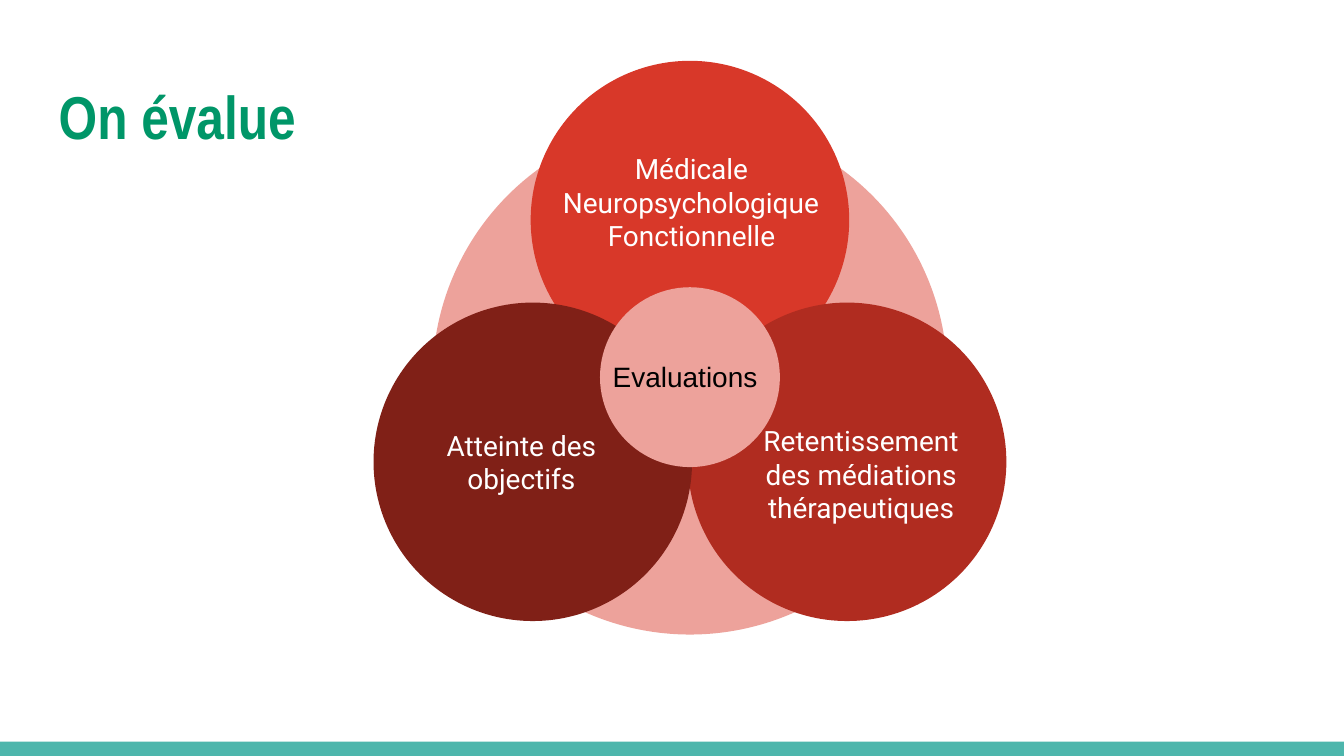
"""Build the "On évalue" slide: three evaluation circles around a shared core."""
from dataclasses import dataclass

from pptx import Presentation
from pptx import util as u
from pptx.dml.color import RGBColor
from pptx.enum import shapes, text

COLORS = {
    "title": "009668", "bar": "4DB6AC", "pale": "EDA29B", "red": "D83829",
    "brick": "B02C20", "maroon": "802017", "white": "FFFFFF", "black": "000000",
}
CENTER_X, CENTER_Y = 13.04, 7.13
RING, PETAL, CORE = 9.73, 6.02, 3.4
SPREAD, DROP = 2.97, 1.6
INSET = u.Cm(0.25)
LEFT, CENTERED = text.PP_ALIGN.LEFT, text.PP_ALIGN.CENTER
TOP, MIDDLE = text.MSO_ANCHOR.TOP, text.MSO_ANCHOR.MIDDLE


@dataclass
class Circle:
    dx: float
    dy: float
    diameter: float
    color: str


@dataclass
class Label:
    box: tuple[float, float, float, float]
    lines: list[str]
    aligns: list
    font: str = "Roboto"
    color: str = "white"
    size: float = 15
    bold: bool = False
    anchor: text.MSO_ANCHOR = MIDDLE


CIRCLES = [
    Circle(0, 0, RING, "pale"),
    Circle(0, -SPREAD, PETAL, "red"),
    Circle(SPREAD, DROP, PETAL, "brick"),
    Circle(-SPREAD, DROP, PETAL, "maroon"),
    Circle(0, 0, CORE, "pale"),
]
TITLE = Label((0.86, 1.24, 23.67, 1.96), ["On évalue"], [LEFT],
              "Arial Narrow", "title", 32.4, True, TOP)
LABELS = [
    Label((10.39, 2.84, 5.36, 1.96),
          ["Médicale", "Neuropsychologique", "Fonctionnelle"],
          [CENTERED, LEFT, CENTERED]),
    Label((14.05, 7.98, 4.45, 1.96),
          ["Retentissement des médiations thérapeutiques"], [CENTERED]),
    Label((7.77, 7.75, 4.17, 1.96), ["Atteinte des objectifs"], [CENTERED]),
    Label((11.33, 6.55, 3.4, 1.14), ["Evaluations"], [LEFT],
          "Arial", "black", anchor=TOP),
]


def rgb(name: str) -> RGBColor:
    return RGBColor.from_string(COLORS[name])


def apply(target, values: dict) -> None:
    for name, value in values.items():
        setattr(target, name, value)


def add_solid(s, kind, box: tuple, color: str) -> None:
    sp = s.shapes.add_shape(kind, *map(u.Cm, box))
    sp.shadow.inherit = False
    sp.fill.solid()
    sp.fill.fore_color.rgb = rgb(color)
    sp.line.fill.background()


def add_circle(s, circle: Circle) -> None:
    d = circle.diameter
    box = (CENTER_X + circle.dx - d / 2, CENTER_Y + circle.dy - d / 2, d, d)
    add_solid(s, shapes.MSO_SHAPE.OVAL, box, circle.color)


def write_label(sp, label: Label) -> None:
    apply(sp, dict(zip(("left", "top", "width", "height"), map(u.Cm, label.box))))
    tf = sp.text_frame
    apply(tf, {"word_wrap": True, "auto_size": text.MSO_AUTO_SIZE.NONE,
               "vertical_anchor": label.anchor,
               "margin_left": INSET, "margin_right": INSET,
               "margin_top": INSET, "margin_bottom": INSET})
    tf.text = "\n".join(label.lines)
    for p, align in zip(tf.paragraphs, label.aligns):
        p.alignment = align
        font = p.runs[0].font
        apply(font, {"name": label.font, "size": u.Pt(label.size), "bold": label.bold})
        font.color.rgb = rgb(label.color)


def main() -> None:
    prs = Presentation()
    apply(prs, {"slide_width": u.Cm(25.4), "slide_height": u.Cm(14.29)})
    s = prs.slides.add_slide(prs.slide_layouts.get_by_name("Title Only"))
    add_solid(s, shapes.MSO_SHAPE.RECTANGLE, (0, 14.02, 25.4, 0.27), "bar")
    write_label(s.shapes.title, TITLE)
    for circle in CIRCLES:
        add_circle(s, circle)
    for label in LABELS:
        write_label(s.shapes.add_textbox(*map(u.Cm, label.box)), label)
    prs.save("out.pptx")


if __name__ == "__main__":
    main()
